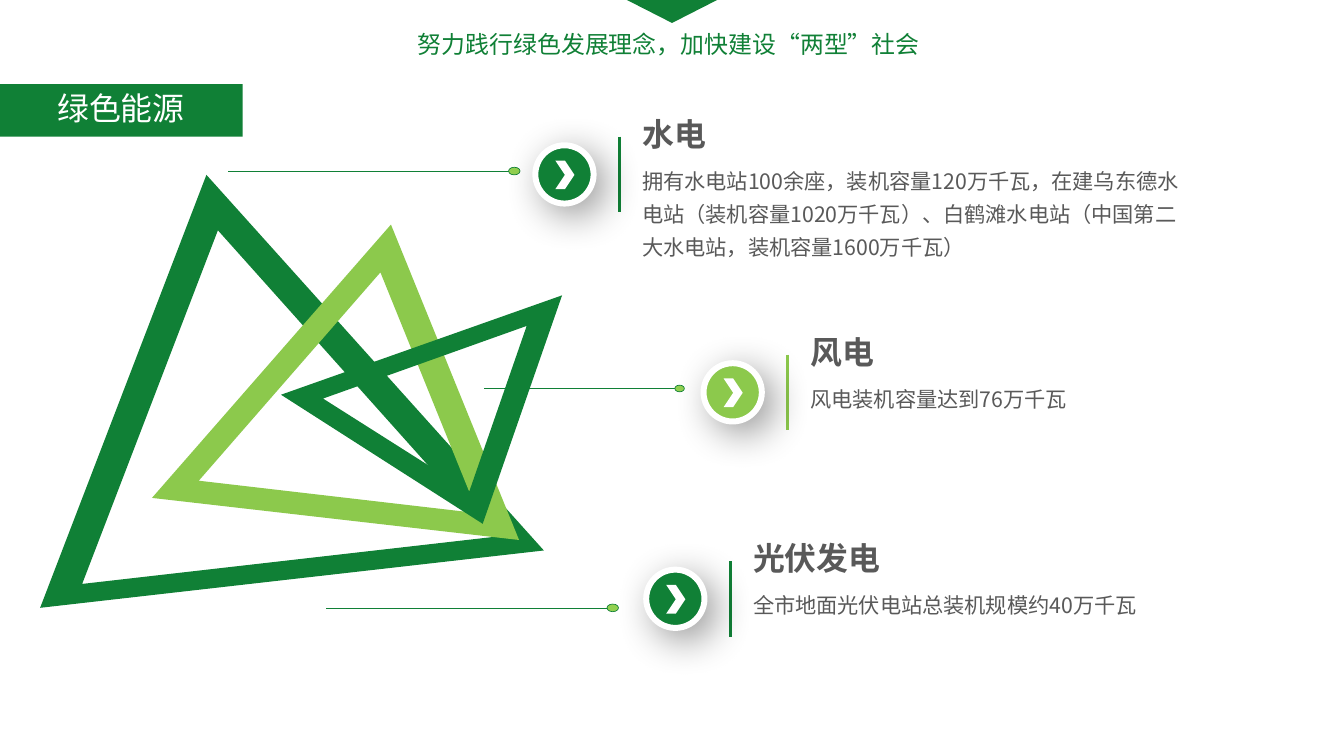
from lxml import etree
from pptx import Presentation
from pptx.dml.color import RGBColor
from pptx.enum.shapes import MSO_CONNECTOR, MSO_SHAPE
from pptx.enum.text import MSO_AUTO_SIZE, PP_ALIGN
from pptx.oxml.ns import qn
from pptx.util import Pt

PX = 9144
FONT = "Noto Sans CJK SC"
COLORS = {
    "green": "108036",
    "lime": "8CC94C",
    "dot": "92D050",
    "gray": "595959",
    "white": "FFFFFF",
    "black": "000000",
}
STRAIGHT = MSO_CONNECTOR.STRAIGHT
OVAL = MSO_SHAPE.OVAL
CHEVRON = MSO_SHAPE.CHEVRON
RECTANGLE = MSO_SHAPE.RECTANGLE
TRIANGLE = MSO_SHAPE.ISOSCELES_TRIANGLE
FIT_SHAPE = MSO_AUTO_SIZE.SHAPE_TO_FIT_TEXT
LEFT, CENTER = PP_ALIGN.LEFT, PP_ALIGN.CENTER

TRIANGLES = [
    ("green", [(174, 0), (0, 453), (527, 393)], [(186, 58), (473, 379), (44, 428)]),
    ("lime", [(367, 52), (117, 338), (501, 382)], [(356, 102), (458, 354), (166, 320)]),
    ("green", [(252, 230), (463, 365), (546, 126)], [(449, 331), (296, 234), (509, 158)]),
]
LEADERS = [
    (197, -4, 299, 12, 8),
    (464, 223, 205, 10, 7),
    (299, 453, 300, 12, 8),
]
ITEMS = [
    ((560, 115, 701, 233), "green", "水电",
     "拥有水电站100余座，装机容量120万千瓦，在建乌东德水电站（装机容量1020万千瓦）、"
     "白鹤滩水电站（中国第二大水电站，装机容量1600万千瓦）"),
    ((736, 343, 563, 94), "lime", "风电", "风电装机容量达到76万千瓦"),
    ((676, 559, 563, 91), "green", "光伏发电", "全市地面光伏电站总装机规模约40万千瓦"),
]


def color(name):
    return RGBColor.from_string(COLORS[name])


def box_emu(box):
    return [length * PX for length in box]


def fill_shape(shape, fill, line=None, line_width=0):
    shape.shadow.inherit = False
    shape.fill.solid()
    shape.fill.fore_color.rgb = color(fill)
    if line:
        shape.line.color.rgb = color(line)
        shape.line.width = Pt(line_width)
    else:
        shape.line.fill.background()


def add_filled(slide, kind, box, fill, line=None, line_width=0):
    shape = slide.shapes.add_shape(kind, *box_emu(box))
    fill_shape(shape, fill, line, line_width)
    return shape


def add_line(slide, start, end, line, width):
    connector = slide.shapes.add_connector(STRAIGHT, *box_emu(start + end))
    connector.line.color.rgb = color(line)
    connector.line.width = Pt(width)
    etree.SubElement(connector._element.spPr, qn("a:effectLst"))


def add_text(slide, box, text, size, text_color, bold=False, align=LEFT, spacing=1.0):
    text_frame = slide.shapes.add_textbox(*box_emu(box)).text_frame
    text_frame.word_wrap = True
    text_frame.auto_size = FIT_SHAPE
    text_frame.text = text
    paragraph = text_frame.paragraphs[0]
    paragraph.alignment = align
    paragraph.line_spacing = spacing
    font = paragraph.runs[0].font
    font.name = FONT
    font.size = Pt(size)
    font.bold = bold
    font.color.rgb = color(text_color)
    etree.SubElement(font._element, qn("a:ea"), typeface=FONT)


def add_soft_shadow(shape):
    effects = shape._element.spPr.find(qn("a:effectLst"))
    shadow = etree.SubElement(
        effects, qn("a:outerShdw"), blurRad=str(Pt(30)), dist=str(Pt(10)),
        dir="2700000", algn="tl", rotWithShape="0")
    shade = etree.SubElement(shadow, qn("a:srgbClr"), val=COLORS["black"])
    etree.SubElement(shade, qn("a:alpha"), val="40000")


def add_triangle_frame(slide, left, top, fill, outer, inner):
    outer, inner = ([(left + x, top + y) for x, y in corners] for corners in (outer, inner))
    builder = slide.shapes.build_freeform(*outer[0], scale=PX)
    builder.add_line_segments(outer[1:], close=True)
    builder.move_to(*inner[0])
    builder.add_line_segments(inner[1:], close=True)
    fill_shape(builder.convert_to_shape(), fill)


def add_leader(slide, left, top, length, dot_width, dot_height):
    right = left + length
    add_line(slide, (right, top), (left, top), "green", 0.5)
    dot_box = (right - dot_width // 2, top - dot_height // 2, dot_width, dot_height)
    add_filled(slide, OVAL, dot_box, "dot", "green", 0.5)


def add_triangle_art(slide, box):
    left, top = box[:2]
    *back_triangles, front_triangle = TRIANGLES
    for triangle in back_triangles:
        add_triangle_frame(slide, left, top, *triangle)
    for x, y, *sizes in LEADERS:
        add_leader(slide, left + x, top + y, *sizes)
    add_triangle_frame(slide, left, top, *front_triangle)


def add_energy_item(slide, box, accent, title, body):
    left, top, width, height = box
    text_left = left + 102
    add_line(slide, (left + 88, top + 28), (left + 88, top + 107), accent, 2.25)
    add_text(slide, (text_left, top, 332, 50), title, 24, "gray", bold=True)
    add_text(slide, (text_left, top + 48, width - 102, height - 48), body, 16, "gray",
             spacing=1.3)
    badge = add_filled(slide, OVAL, (left, top + 37, 61, 61), accent, "white", 4.5)
    add_soft_shadow(badge)
    add_filled(slide, CHEVRON, (left + 21, top + 53, 20, 30), "white")


def add_header(slide, box):
    left, top, width, height = box
    marker = add_filled(slide, TRIANGLE, (left + 350, top - 2, 102, 26), "green")
    marker.rotation = 180
    add_text(slide, (left, top + 26, width, height - 26),
             "努力践行绿色发展理念，加快建设“两型”社会", 18, "green", align=CENTER)


def add_section_label(slide, box):
    left, top, width, height = box
    add_filled(slide, RECTANGLE, box, "green")
    add_text(slide, (left + 50, top, width - 31, height - 5), "绿色能源", 24, "white")


def main():
    presentation = Presentation()
    presentation.slide_width = 1406 * PX
    presentation.slide_height = 791 * PX
    slide = presentation.slides.add_slide(presentation.slide_layouts[6])
    add_triangle_art(slide, (42, 183, 546, 453))
    for item in ITEMS:
        add_energy_item(slide, *item)
    add_header(slide, (302, 0, 795, 66))
    add_section_label(slide, (0, 88, 254, 55))
    presentation.save("out.pptx")


if __name__ == "__main__":
    main()
